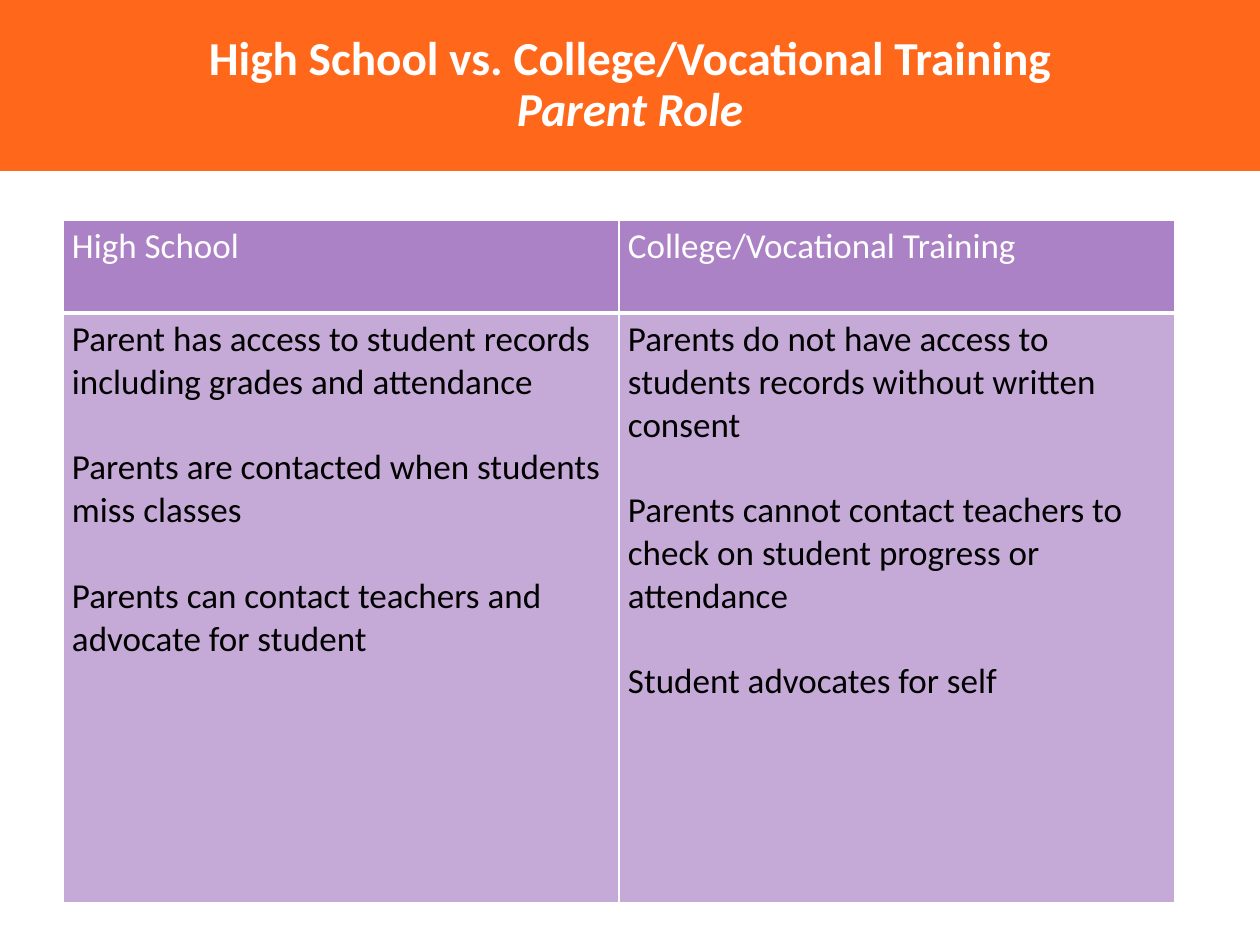
from copy import deepcopy

from lxml.etree import SubElement
from pptx import Presentation
from pptx.dml.color import RGBColor
from pptx.enum.text import MSO_ANCHOR, MSO_AUTO_SIZE, PP_ALIGN
from pptx.oxml.ns import qn
from pptx.util import Emu, Pt

TITLE = ["High School vs. College/Vocational Training", "Parent Role"]
HEADS = ["High School", "College/Vocational Training"]
BODIES = [
    [
        "Parent has access to student records including grades and attendance",
        "Parents are contacted when students miss classes",
        "Parents can contact teachers and advocate for student",
    ],
    [
        "Parents do not have access to students records without written consent",
        "Parents cannot contact teachers to check on student progress or attendance",
        "Student advocates for self",
    ],
]
ROWS = [
    {"height": 93, "fill": "AB82C5", "color": "FFFFFF", "base": 3},
    {"height": 590, "fill": "C5A9D7", "color": "000000", "base": 1},
]
WHITE, ORANGE = "FFFFFF", "FF671B"
WIDTH, HEIGHT, BANNER = 1260, 945, 171
LEFT, TOP, COLUMN = 63, 220, 556
LINE = 24.4


def px(count):
    """Turn pixels into EMU."""
    return Emu(round(count * 914400 / 126))


def paint(fill, color):
    """Fill with one solid colour."""
    fill.solid()
    fill.fore_color.rgb = RGBColor.from_string(color)


def write(para, text, size=20, color=WHITE, bold=None, italic=None):
    """Add a formatted run to a paragraph."""
    run = para.add_run()
    run.text = text
    font = run.font
    font.name, font.size = "Calibri", Pt(size)
    font.bold, font.italic = bold, italic
    font.color.rgb = RGBColor.from_string(color)
    return run


def border(cell, base):
    """Draw white cell borders, with a chosen bottom width."""
    props = cell._tc.get_or_add_tcPr()
    for side, width in zip("LRTB", (1, 1, 1, base)):
        line = SubElement(props, qn(f"a:ln{side}"), w=str(Pt(width)))
        solid = SubElement(line, qn("a:solidFill"))
        SubElement(solid, qn("a:srgbClr"), val=WHITE)


def banner(slide):
    """Format the title placeholder as a banner."""
    title = slide.shapes.title
    title.left, title.top = px(0), px(0)
    title.width, title.height = px(WIDTH), px(BANNER)
    paint(title.fill, ORANGE)
    frame = title.text_frame
    frame.auto_size = MSO_AUTO_SIZE.NONE
    frame.vertical_anchor = MSO_ANCHOR.MIDDLE
    para = frame.paragraphs[0]
    para.alignment, para.line_spacing = PP_ALIGN.CENTER, 0.9
    first = write(para, TITLE[0], size=27, bold=True)
    para._p.add_br().append(deepcopy(first._r.rPr))
    write(para, TITLE[1], size=27, bold=True, italic=True)


def compare(slide):
    """Build the comparison table."""
    cells = [[[head] for head in HEADS], BODIES]
    total = sum(row["height"] for row in ROWS)
    table = slide.shapes.add_table(
        len(ROWS), len(HEADS), px(LEFT), px(TOP),
        px(COLUMN * len(HEADS)), px(total)).table
    for column in table.columns:
        column.width = px(COLUMN)
    for i, style in enumerate(ROWS):
        table.rows[i].height = px(style["height"])
        for j, texts in enumerate(cells[i]):
            cell = table.cell(i, j)
            cell.margin_left = cell.margin_right = px(9)
            cell.margin_top = cell.margin_bottom = px(5)
            border(cell, style["base"])
            paint(cell.fill, style["fill"])
            frame = cell.text_frame
            for k, text in enumerate(texts):
                para = frame.add_paragraph() if k else frame.paragraphs[0]
                para.space_before = Pt(LINE if k else 0)
                write(para, text, color=style["color"], bold=False)


def main():
    """Build and save the slide."""
    deck = Presentation()
    deck.slide_width, deck.slide_height = px(WIDTH), px(HEIGHT)
    slide = deck.slides.add_slide(deck.slide_layouts[5])
    banner(slide)
    compare(slide)
    deck.save("out.pptx")


if __name__ == "__main__":
    main()
